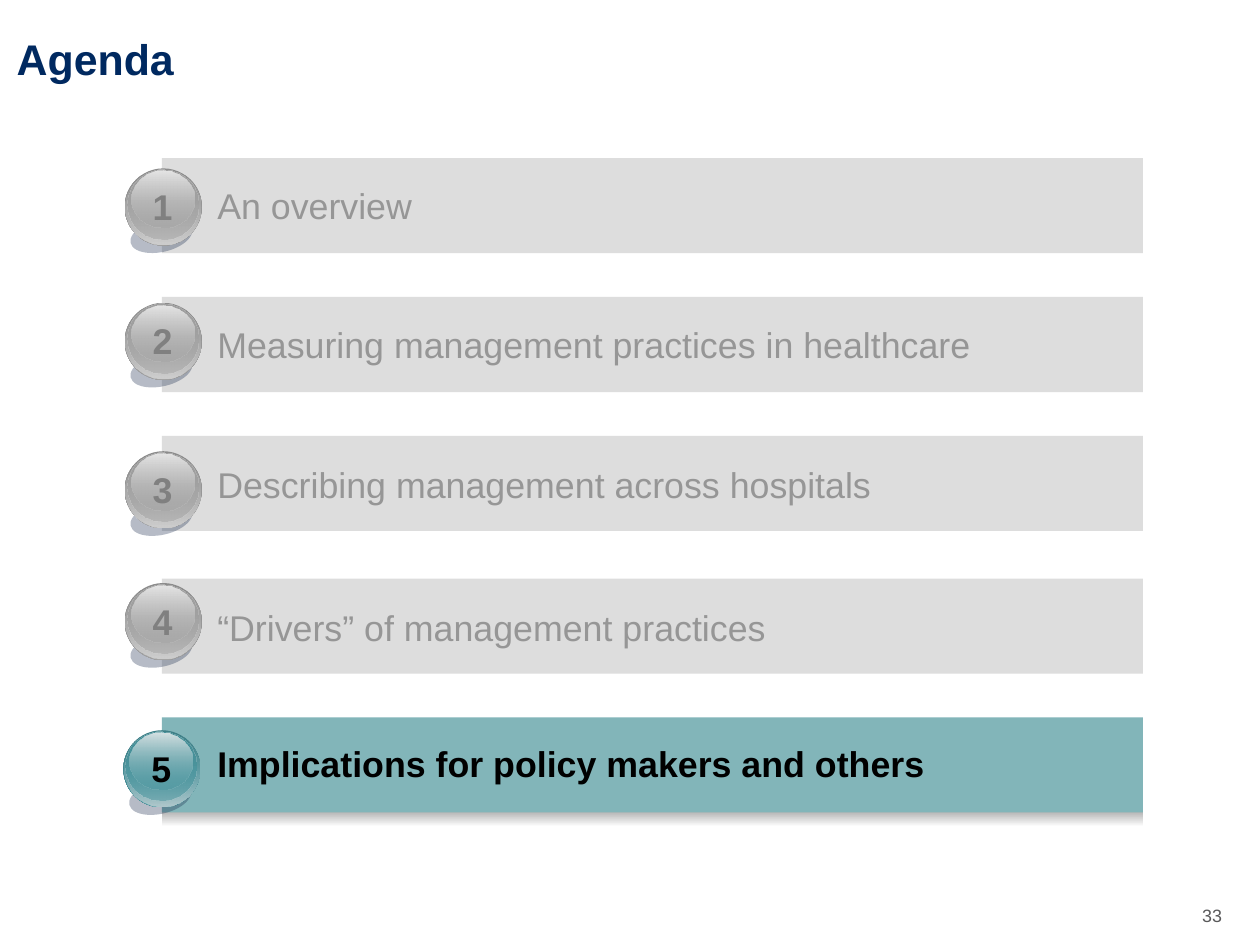
from dataclasses import dataclass
from typing import Optional

from lxml.etree import SubElement
from pptx import Presentation
from pptx.dml.color import RGBColor
from pptx.enum.shapes import MSO_SHAPE
from pptx.enum.text import MSO_ANCHOR, MSO_AUTO_SIZE, PP_ALIGN
from pptx.oxml.ns import qn
from pptx.util import Inches, Pt

# The grid has ten columns and ten rows to the inch.
CELL = 0.1
PAGE_COLUMNS, PAGE_ROWS = 98, 73.5
BAR_COLUMN, BAR_WIDTH, BAR_HEIGHT = 12.6, 76.3, 7.4
LABEL_COLUMN, LABEL_WIDTH, LABEL_HEIGHT = 16.9, 69.4, 3.3

NAVY = RGBColor(0x00, 0x29, 0x60)
SLATE = RGBColor(0x59, 0x59, 0x5A)
BLACK = RGBColor(0x00, 0x00, 0x00)
WHITE = RGBColor(0xFF, 0xFF, 0xFF)
SHADOW = RGBColor(0x0F, 0x21, 0x45)
PALE_GREY = RGBColor(0xDD, 0xDD, 0xDD)
LABEL_GREY = RGBColor(0x96, 0x96, 0x96)
NUMBER_GREY = RGBColor(0x80, 0x80, 0x80)
BALL_GREY = RGBColor(0xA4, 0xA4, 0xA4)
TEAL = RGBColor(0x82, 0xB5, 0xB9)
BALL_TEAL = RGBColor(0x48, 0x95, 0x9E)


@dataclass(frozen=True)
class Area:
    column: float
    row: float
    columns: float
    rows: float


@dataclass(frozen=True)
class Stop:
    color: RGBColor
    opacity: int = 100


@dataclass(frozen=True)
class Theme:
    bar: RGBColor
    label: RGBColor
    number: RGBColor
    bold: bool
    layers: tuple[tuple[Stop, Stop], ...]


@dataclass(frozen=True)
class Item:
    label: str
    bar_row: float
    label_row: float
    ball_row: float
    ball_column: float = 9.7
    active: bool = False


def ball_layers(ball: RGBColor, rim: RGBColor, edge: RGBColor,
                body: RGBColor, shine: RGBColor) -> tuple[tuple[Stop, Stop], ...]:
    return (
        (Stop(rim), Stop(ball)),
        (Stop(ball, 0), Stop(edge)),
        (Stop(body), Stop(ball, 48)),
        (Stop(shine), Stop(ball, 38)),
    )


MUTED = Theme(PALE_GREY, LABEL_GREY, NUMBER_GREY, False, ball_layers(
    BALL_GREY, RGBColor(0x8C, 0x8C, 0x8C), RGBColor(0xCE, 0xCE, 0xCE),
    RGBColor(0xA1, 0xA1, 0xA1), RGBColor(0xE5, 0xE5, 0xE5)))
ACTIVE = Theme(TEAL, BLACK, BLACK, True, ball_layers(
    BALL_TEAL, RGBColor(0x3E, 0x7F, 0x87), RGBColor(0xB1, 0xC8, 0xCC),
    RGBColor(0x47, 0x92, 0x9B), RGBColor(0xD6, 0xE1, 0xE3)))

# Positions relative to the top left of a ball.
SHADOW_AREA = Area(0.4, 4, 4.9, 2.5)
LAYER_AREAS = (Area(0, 0, 6, 6), Area(0.1, 0.1, 5.8, 5.8),
               Area(0.2, 0.1, 5.5, 5.4), Area(0.5, 0.2, 4.9, 4.4))
NUMBER_AREA = Area(1.9, 1.9, 2.1, 2.1)

ITEMS = (
    Item("An overview", 12.3, 14.3, 13.1),
    Item("Measuring management practices in healthcare", 23.1, 25.1, 23.55),
    Item("Describing management across hospitals", 33.9, 36, 35.1),
    Item("“Drivers” of management practices", 45, 47.1, 45.35),
    Item("Implications for policy makers and others", 55.8, 57.7, 56.8, 9.6, True),
)


def cells(count: float) -> int:
    return Inches(count * CELL)


def place(area: Area) -> tuple[int, int, int, int]:
    return (cells(area.column), cells(area.row),
            cells(area.columns), cells(area.rows))


def write(shape, text: str, size: float, color: RGBColor, bold: bool = False,
          align: PP_ALIGN = PP_ALIGN.LEFT, anchor: MSO_ANCHOR = MSO_ANCHOR.TOP,
          wrap: bool = True, inset: float = 0) -> None:
    frame = shape.text_frame
    margins = {f"margin_{side}": cells(inset)
               for side in ("left", "top", "right", "bottom")}
    frame_format = {"auto_size": MSO_AUTO_SIZE.NONE, "word_wrap": wrap,
                    "vertical_anchor": anchor, **margins}
    for name, value in frame_format.items():
        setattr(frame, name, value)
    para = frame.paragraphs[0]
    para.alignment = align
    span = para.add_run()
    span.text = text
    for name, value in {"name": "Arial", "size": Pt(size), "bold": bold}.items():
        setattr(span.font, name, value)
    span.font.color.rgb = color


def add_shape(shapes, kind: MSO_SHAPE, area: Area, stops: Optional[tuple[Stop, ...]] = None):
    """One stop gives a solid fill, two a top-to-bottom gradient, none no fill."""
    shape = shapes.add_shape(kind, *place(area))
    shape.shadow.inherit = False
    shape.line.fill.background()
    if not stops:
        shape.fill.background()
        return shape
    if len(stops) == 1:
        shape.fill.solid()
        shape.fill.fore_color.rgb = stops[0].color
    else:
        shape.fill.gradient()
        shape.fill.gradient_angle = 270
        for gradient_stop, stop in zip(shape.fill.gradient_stops, stops):
            gradient_stop.color.rgb = stop.color
    colors = shape.element.spPr.iter(qn("a:srgbClr"))
    for color, stop in zip(list(colors), stops):
        if stop.opacity < 100:
            SubElement(color, qn("a:alpha")).set("val", str(stop.opacity * 1000))
    return shape


def add_ball(shapes, number: int, item: Item, theme: Theme) -> None:
    def shifted(area: Area) -> Area:
        return Area(item.ball_column + area.column, item.ball_row + area.row,
                    area.columns, area.rows)

    shadow = add_shape(shapes, MSO_SHAPE.OVAL, shifted(SHADOW_AREA), (Stop(SHADOW, 30),))
    shadow.rotation = 347.1
    for area, stops in zip(LAYER_AREAS, theme.layers):
        add_shape(shapes, MSO_SHAPE.OVAL, shifted(area), stops)
    badge = add_shape(shapes, MSO_SHAPE.OVAL, shifted(NUMBER_AREA))
    write(badge, str(number), 20, theme.number, True,
          PP_ALIGN.CENTER, MSO_ANCHOR.MIDDLE, False, 0.8)


def add_item(page, number: int, item: Item) -> None:
    theme = ACTIVE if item.active else MUTED
    shapes = page.shapes.add_group_shape().shapes
    if item.active:
        add_shape(shapes, MSO_SHAPE.RECTANGLE, Area(BAR_COLUMN, 62.9, BAR_WIDTH, 1.4),
                  (Stop(BALL_GREY), Stop(WHITE)))
    add_shape(shapes, MSO_SHAPE.RECTANGLE,
              Area(BAR_COLUMN, item.bar_row, BAR_WIDTH, BAR_HEIGHT), (Stop(theme.bar),))
    label = shapes.add_textbox(
        *place(Area(LABEL_COLUMN, item.label_row, LABEL_WIDTH, LABEL_HEIGHT)))
    write(label, item.label, 20, theme.label, theme.bold)
    add_ball(shapes, number, item, theme)


def main() -> None:
    deck = Presentation()
    deck.slide_width, deck.slide_height = cells(PAGE_COLUMNS), cells(PAGE_ROWS)
    page = deck.slides.add_slide(deck.slide_layouts[5])
    title = page.shapes.title
    title.left, title.top, title.width, title.height = place(Area(1.3, 2.5, 94.3, 4))
    write(title, "Agenda", 24, NAVY, True)
    for number, item in enumerate(ITEMS, start=1):
        add_item(page, number, item)
    page_number = page.shapes.add_textbox(*place(Area(93.5, 70.4, 2.1, 1.7)))
    write(page_number, "33", 10, SLATE, wrap=False)
    deck.save("out.pptx")


if __name__ == "__main__":
    main()
